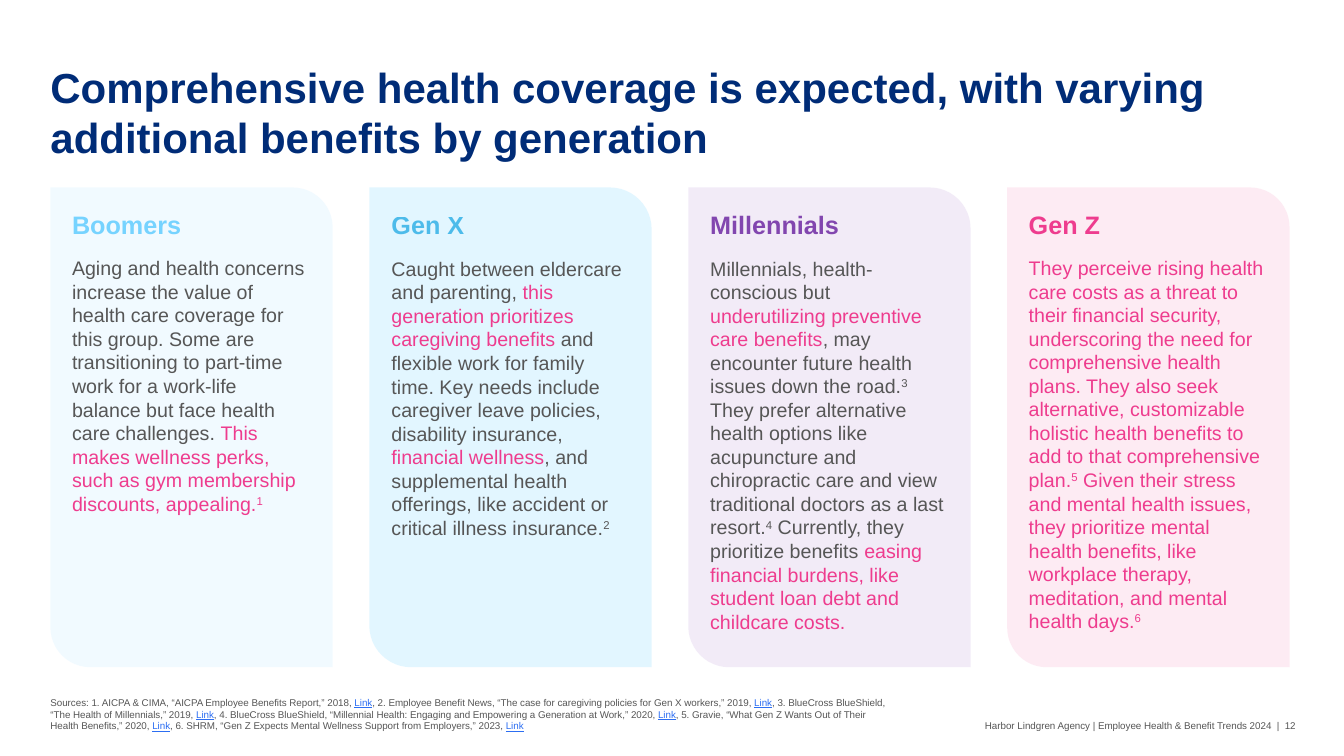
"""Build the slide on health benefits expected by each generation."""
from dataclasses import dataclass

from lxml.etree import SubElement
from pptx import Presentation
from pptx.dml.color import RGBColor
from pptx.dml.fill import FillFormat
from pptx.enum.shapes import MSO_SHAPE
from pptx.enum.text import MSO_ANCHOR, PP_ALIGN
from pptx.oxml.ns import qn
from pptx.slide import Slide
from pptx.text.text import TextFrame, _Paragraph
from pptx.util import Inches, Pt

FONT = "Arial"
GREY, PINK, NAVY, LINK_BLUE = "565656", "EE3C8E", "002C77", "2C6EF2"
LEFT, CONTENT_WIDTH = 0.5, 12.29
CARD_TOP, CARD_WIDTH, CARD_HEIGHT = 1.86, 2.8, 4.76


@dataclass
class Span:
    text: str
    color: str = GREY
    size: float = 14
    bold: bool = False
    underline: bool = False
    superscript: bool = False
    opacity: int = 100


@dataclass
class Generation:
    heading: Span
    tint: str
    corner: float
    story: list[Span]


def note(number: int, color: str = GREY) -> Span:
    return Span(str(number), color, superscript=True)


GENERATIONS = [
    Generation(Span("Boomers", "76D3FF", 18, True), "E4F6FF", 0.142, [
        Span("Aging and health concerns increase the value of health care coverage for "
             "this group. Some are transitioning to part-time work for a work-life "
             "balance but face health care challenges. "),
        Span("This makes wellness perks, such as gym membership discounts, appealing.", PINK),
        note(1, PINK),
    ]),
    Generation(Span("Gen X", "009DE0", 18, True, opacity=65), "C6EEFF", 0.148, [
        Span("Caught between eldercare and parenting, "),
        Span("this generation prioritizes caregiving benefits ", PINK),
        Span("and flexible work for family time. Key needs include caregiver leave "
             "policies, disability insurance, "),
        Span("financial wellness", PINK),
        Span(", and supplemental health offerings, like accident or critical illness "
             "insurance."),
        note(2),
    ]),
    Generation(Span("Millennials", "8246AF", 18, True), "E6D9F0", 0.145, [
        Span("Millennials, health-conscious but "),
        Span("underutilizing preventive care benefits", PINK),
        Span(", may encounter future health issues down the road."),
        note(3),
        Span(" They prefer alternative health options like acupuncture and chiropractic "
             "care and view traditional doctors as a last resort."),
        note(4),
        Span(" Currently, they prioritize benefits "),
        Span("easing financial burdens, like student loan debt and childcare costs.", PINK),
    ]),
    Generation(Span("Gen Z", PINK, 18, True), "FCD8E8", 0.14, [
        Span("They perceive rising health\ncare costs as a threat to their financial "
             "security, underscoring the need for comprehensive health plans. They also "
             "seek alternative, customizable holistic health benefits to add to that "
             "comprehensive plan.", PINK),
        note(5, PINK),
        Span(" Given their stress and mental health issues, they prioritize mental health "
             "benefits, like workplace therapy, meditation, and mental health days.", PINK),
        note(6, PINK),
    ]),
]

CITATIONS = [
    "Sources: 1. AICPA & CIMA, “AICPA Employee Benefits Report,” 2018, ",
    ", 2. Employee Benefit News, “The case for caregiving policies for Gen X workers,” 2019, ",
    ", 3. BlueCross BlueShield, “The Health of Millennials,” 2019, ",
    ", 4. BlueCross BlueShield, “Millennial Health: Engaging and Empowering a Generation "
    "at Work,” 2020, ",
    ", 5. Gravie, “What Gen Z Wants Out of Their Health Benefits,” 2020, ",
    ", 6. SHRM, “Gen Z Expects Mental Wellness Support from Employers,” 2023, ",
]


def paint(fill: FillFormat, color: str, opacity: int = 100) -> None:
    fill.solid()
    fill.fore_color.rgb = RGBColor.from_string(color)
    if opacity < 100:
        color_element = fill._xPr.find(qn("a:solidFill"))[0]
        SubElement(color_element, qn("a:alpha"), val=str(opacity * 1000))


def write(paragraph: _Paragraph, spans: list[Span]) -> None:
    for span in spans:
        for index, line in enumerate(span.text.split("\n")):
            if index:
                paragraph.add_line_break()
            run = paragraph.add_run()
            run.text = line
            run.font.name = FONT
            run.font.size = Pt(span.size)
            run.font.bold = span.bold
            run.font.underline = span.underline
            paint(run.font.fill, span.color, span.opacity)
            if span.superscript:
                run.font._element.set("baseline", "30000")


def set_frame(frame: TextFrame, margin: float, anchor: MSO_ANCHOR) -> None:
    frame.word_wrap = True
    frame.vertical_anchor = anchor
    frame.margin_left = frame.margin_right = Inches(margin)
    frame.margin_top = frame.margin_bottom = Inches(margin)


def add_text(slide: Slide, left: float, top: float, width: float, height: float,
             spans: list[Span], align: PP_ALIGN = PP_ALIGN.LEFT,
             anchor: MSO_ANCHOR = MSO_ANCHOR.TOP) -> None:
    frame = slide.shapes.add_textbox(
        Inches(left), Inches(top), Inches(width), Inches(height)).text_frame
    set_frame(frame, 0, anchor)
    frame.paragraphs[0].alignment = align
    write(frame.paragraphs[0], spans)


def add_card(slide: Slide, left: float, generation: Generation) -> None:
    card = slide.shapes.add_shape(
        MSO_SHAPE.ROUND_2_DIAG_RECTANGLE, Inches(left), Inches(CARD_TOP),
        Inches(CARD_WIDTH), Inches(CARD_HEIGHT))
    card.adjustments[0] = 0
    card.adjustments[1] = generation.corner
    card.shadow.inherit = False
    card.line.fill.background()
    paint(card.fill, generation.tint, 50)
    frame = card.text_frame
    set_frame(frame, 0.1, MSO_ANCHOR.TOP)
    for paragraph, spans in ((frame.paragraphs[0], [generation.heading]),
                             (frame.add_paragraph(), generation.story)):
        paragraph.alignment = PP_ALIGN.LEFT
        paragraph.space_after = Pt(12)
        write(paragraph, spans)


def main() -> None:
    presentation = Presentation()
    presentation.slide_width = Inches(13.33)
    presentation.slide_height = Inches(7.5)
    slide = presentation.slides.add_slide(presentation.slide_layouts[6])

    add_text(slide, 8.89, 7.14, 3.96, 0.12, [
        Span("Harbor Lindgren Agency | Employee Health & Benefit Trends 2024\u00a0 |\u00a0 12"
             .replace("\u00a0", " "), size=7)], PP_ALIGN.RIGHT)
    pitch = (CONTENT_WIDTH - CARD_WIDTH) / (len(GENERATIONS) - 1)
    for column, generation in enumerate(GENERATIONS):
        add_card(slide, LEFT + column * pitch, generation)
    add_text(slide, LEFT, 0.61, CONTENT_WIDTH, 0.5, [
        Span("Comprehensive health coverage is expected, with varying additional "
             "benefits by generation", NAVY, 30, True)])
    sources = [span for citation in CITATIONS
               for span in (Span(citation, size=7), Span("Link", LINK_BLUE, 7, underline=True))]
    add_text(slide, LEFT, 6.91, 8.31, 0.35, sources, anchor=MSO_ANCHOR.BOTTOM)

    presentation.save("out.pptx")


if __name__ == "__main__":
    main()
